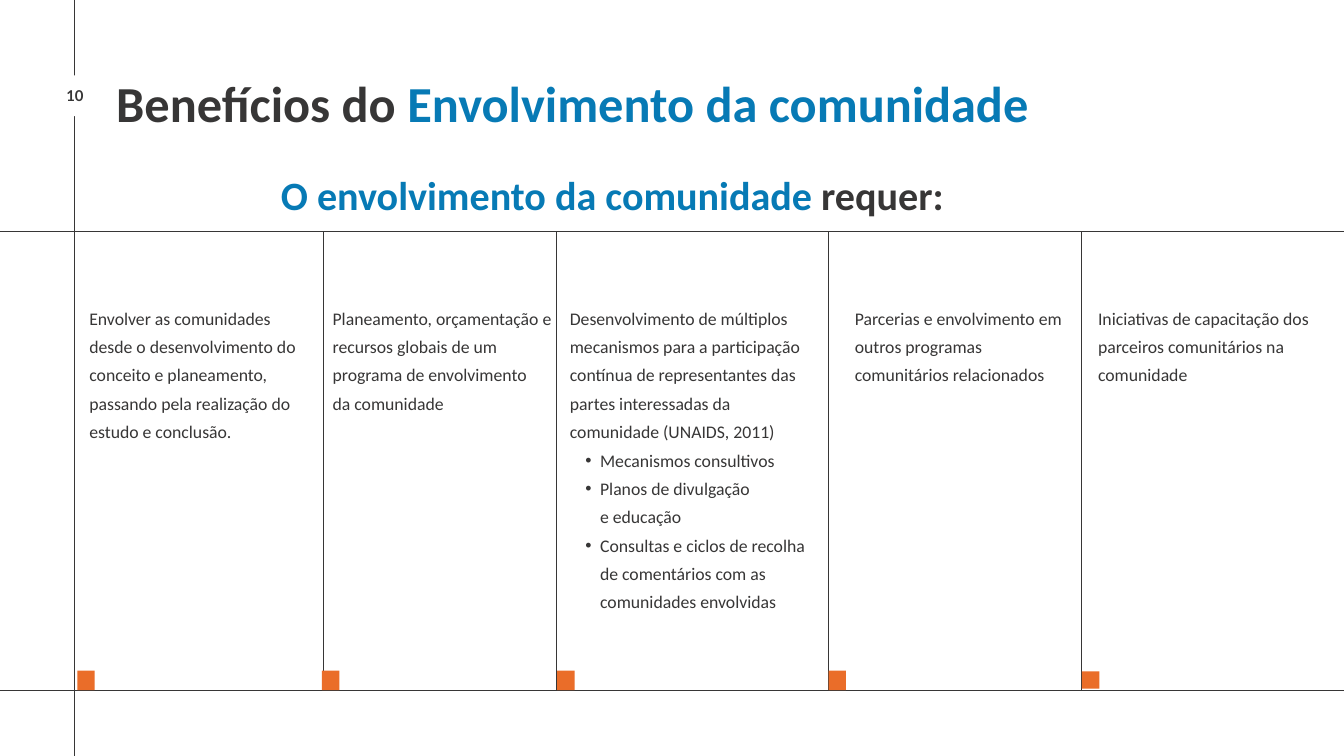
from dataclasses import dataclass

from lxml.etree import SubElement
from pptx import Presentation
from pptx.dml.color import RGBColor
from pptx.enum.shapes import MSO_CONNECTOR as Connector, MSO_SHAPE as Shape
from pptx.enum.text import MSO_AUTO_SIZE as AutoSize, PP_ALIGN as Align
from pptx.oxml.ns import qn
from pptx.util import Emu, Pt

PX = 9144  # 100 px to the inch
WIDTH, HEIGHT = 2000, 1125
TOP_RULE, BOTTOM_RULE = 345, 1027
AXIS_X = 111
BODY_TOP = 447
BULLET_INDENT, BULLET_HANG = 45, 22

COLORS = {
    "ink": "373636",
    "blue": "077AB5",
    "orange": "EA6D29",
    "white": "FFFFFF",
}


@dataclass(frozen=True)
class Segment:
    text: str
    color: str = "ink"


@dataclass(frozen=True)
class Line:
    segments: tuple[Segment, ...]
    indent: int = 0
    bullet: bool = False


@dataclass(frozen=True)
class TextStyle:
    size: int
    spacing: float
    font: str = "Calibri"
    bold: bool = True
    align: Align = Align.LEFT


@dataclass(frozen=True)
class Requirement:
    text_x: int
    width: int
    height: int
    marker_x: int
    lines: tuple[Line, ...]
    divider_x: int | None = None
    marker_top: int = 998
    marker_height: int = 29


TITLE = TextStyle(54, 77)
SUBTITLE = TextStyle(43, 47.3)
BODY = TextStyle(19, 30.4, bold=False)
PAGE_NUMBER = TextStyle(16, 17.6, font="Lato", align=Align.CENTER)


def px(length: int) -> Emu:
    return Emu(length * PX)


def rgb(name: str) -> RGBColor:
    return RGBColor.from_string(COLORS[name])


def plain(text: str) -> Line:
    return Line((Segment(text),))


def item(text: str, bullet: bool = True) -> Line:
    return Line((Segment(text),), BULLET_INDENT, bullet)


def draw_block(slide, x: int, y: int, width: int, height: int, color: str) -> None:
    block = slide.shapes.add_shape(Shape.RECTANGLE, px(x), px(y), px(width), px(height))
    block.shadow.inherit = False
    block.fill.solid()
    block.fill.fore_color.rgb = rgb(color)
    block.line.fill.background()


def draw_rule(slide, x1: int, y1: int, x2: int, y2: int) -> None:
    rule = slide.shapes.add_connector(Connector.STRAIGHT, px(x1), px(y1), px(x2), px(y2))
    rule.line.color.rgb = rgb("ink")
    rule.line.width = Pt(0.75)
    SubElement(rule._element.spPr, qn("a:effectLst"))


def indent_paragraph(paragraph, line: Line) -> None:
    properties = paragraph._p.get_or_add_pPr()
    properties.set("marL", str(px(line.indent)))
    properties.set("indent", str(px(-BULLET_HANG if line.bullet else 0)))
    if line.bullet:
        SubElement(properties, qn("a:buFont"), typeface="Arial")
        SubElement(properties, qn("a:buChar"), char="•")


def draw_text(slide, x: int, y: int, width: int, height: int,
              lines: tuple[Line, ...], style: TextStyle) -> None:
    frame = slide.shapes.add_textbox(px(x), px(y), px(width), px(height)).text_frame
    frame.word_wrap = True
    frame.auto_size = AutoSize.SHAPE_TO_FIT_TEXT
    frame.margin_left = frame.margin_right = frame.margin_top = frame.margin_bottom = 0
    for index, line in enumerate(lines):
        paragraph = frame.add_paragraph() if index else frame.paragraphs[0]
        if line.indent:
            indent_paragraph(paragraph, line)
        paragraph.alignment = style.align
        paragraph.line_spacing = Pt(style.spacing)
        for segment in line.segments:
            run = paragraph.add_run()
            run.text = segment.text
            run.font.name = style.font
            run.font.size = Pt(style.size)
            run.font.bold = style.bold
            run.font.color.rgb = rgb(segment.color)


REQUIREMENTS = (
    Requirement(133, 330, 247, 115, (
        plain("Envolver as comunidades desde o desenvolvimento do conceito e "
              "planeamento, passando pela realização do estudo e conclusão."),
    )),
    Requirement(495, 344, 248, 479, (
        plain("Planeamento, orçamentação e recursos globais de um programa "
              "de envolvimento"),
        plain("da comunidade"),
    ), divider_x=481),
    Requirement(848, 369, 585, 829, (
        plain("Desenvolvimento de múltiplos mecanismos para a participação contínua "
              "de representantes das partes interessadas da comunidade (UNAIDS, 2011)"),
        item("Mecanismos consultivos"),
        item("Planos de divulgação"),
        item("e educação", bullet=False),
        item("Consultas e ciclos de recolha de comentários com as comunidades "
             "envolvidas"),
    ), divider_x=828),
    Requirement(1272, 312, 205, 1233, (
        plain("Parcerias e envolvimento em outros programas comunitários relacionados"),
    ), divider_x=1232),
    Requirement(1634, 344, 80, 1610, (
        plain("Iniciativas de capacitação dos parceiros comunitários na comunidade"),
    ), divider_x=1609, marker_top=999, marker_height=26),
)


def main() -> None:
    deck = Presentation()
    deck.slide_width, deck.slide_height = px(WIDTH), px(HEIGHT)
    slide = deck.slides.add_slide(deck.slide_layouts[6])

    # Vertical axis, interrupted by the page number
    draw_rule(slide, AXIS_X, 0, AXIS_X, HEIGHT)
    draw_block(slide, 68, 112, 86, 61, "white")
    draw_text(slide, 75, 131, 73, 25, (plain("10"),), PAGE_NUMBER)

    # Horizontal rules and column dividers
    for y in (BOTTOM_RULE, TOP_RULE):
        draw_rule(slide, 0, y, WIDTH, y)
    for column in REQUIREMENTS:
        if column.divider_x is not None:
            draw_rule(slide, column.divider_x, TOP_RULE, column.divider_x, BOTTOM_RULE)

    # Headings
    title = Line((Segment("Benefícios do "),
                  Segment("Envolvimento da comunidade", "blue")))
    subtitle = Line((Segment("O envolvimento da comunidade ", "blue"),
                     Segment("requer:")))
    draw_text(slide, 173, 91, 1817, 98, (title,), TITLE)
    draw_text(slide, 418, 260, 1230, 67, (subtitle,), SUBTITLE)

    # Requirements with their markers
    for column in REQUIREMENTS:
        draw_block(slide, column.marker_x, column.marker_top, 26,
                   column.marker_height, "orange")
        draw_text(slide, column.text_x, BODY_TOP, column.width, column.height,
                  column.lines, BODY)

    deck.save("out.pptx")


if __name__ == "__main__":
    main()
